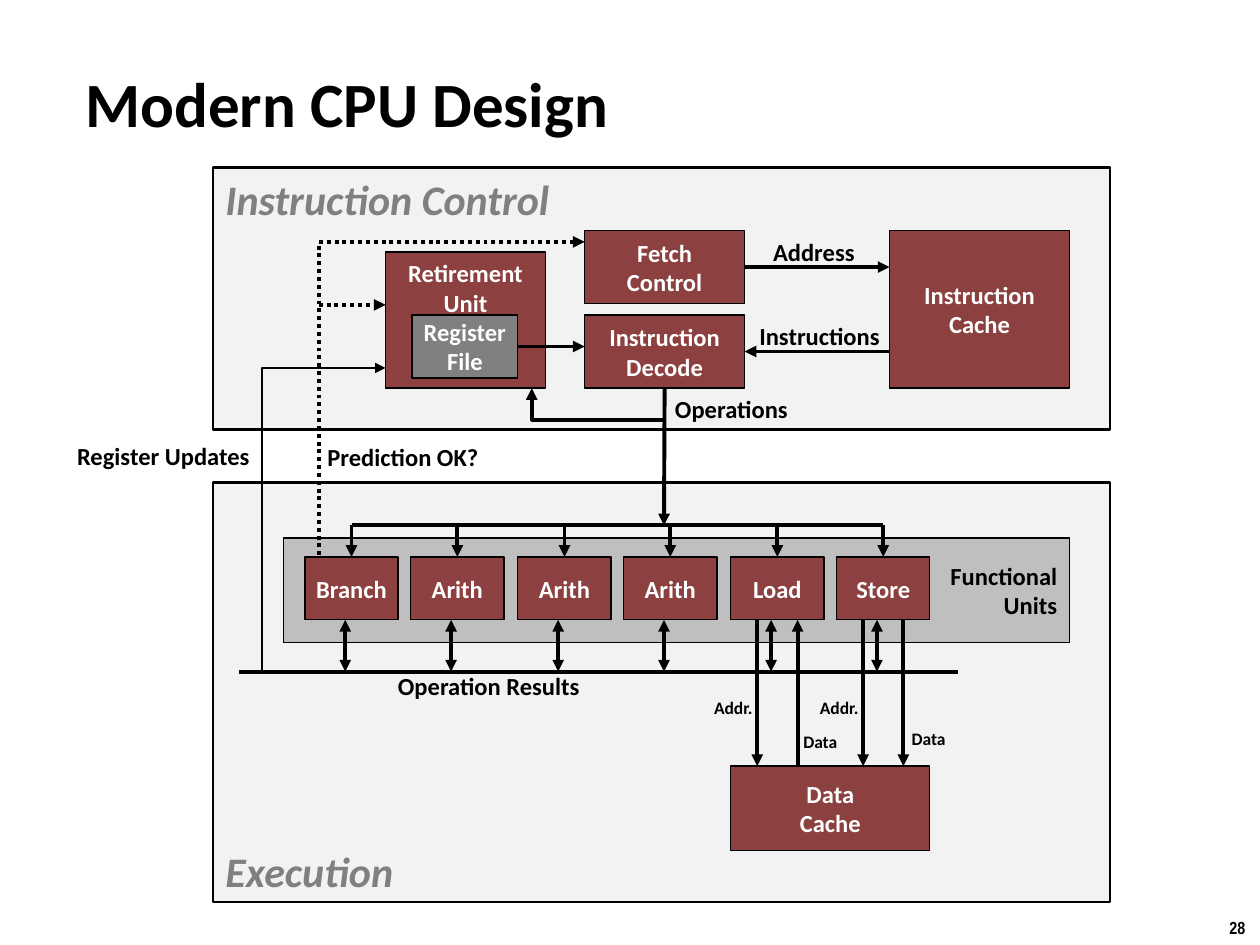
from lxml import etree
from pptx import Presentation
from pptx.dml.color import RGBColor
from pptx.enum.dml import MSO_LINE
from pptx.enum.shapes import MSO_CONNECTOR, MSO_SHAPE
from pptx.enum.text import MSO_ANCHOR, MSO_AUTO_SIZE, PP_ALIGN
from pptx.oxml.ns import qn
from pptx.util import Inches, Pt

THEME = {
    "font": "Calibri", "number_font": "Arial Narrow",
    "black": RGBColor(0, 0, 0), "white": RGBColor(255, 255, 255),
    "panel": RGBColor(0xF2, 0xF2, 0xF2), "band": RGBColor(0xBF, 0xBF, 0xBF),
    "unit": RGBColor(0x8C, 0x40, 0x40), "gray": RGBColor(0x80, 0x80, 0x80),
    "title": 36, "heading": 24, "body": 14, "small": 10,
}
LEFT, CENTER, RIGHT = PP_ALIGN.LEFT, PP_ALIGN.CENTER, PP_ALIGN.RIGHT
TOP, MIDDLE, BOTTOM = MSO_ANCHOR.TOP, MSO_ANCHOR.MIDDLE, MSO_ANCHOR.BOTTOM

prs = Presentation()
prs.slide_width, prs.slide_height = Inches(10), Inches(7.5)
s = prs.slides.add_slide(prs.slide_layouts[6])


def add_box(text, x, y, w, h, fill=None, color="white", size="body", align=CENTER,
            anchor=MIDDLE, border=0.75, italic=False, font="font"):
    at = Inches(x), Inches(y), Inches(w), Inches(h)
    if fill:
        sp = s.shapes.add_shape(MSO_SHAPE.RECTANGLE, *at)
        sp.shadow.inherit = False
        sp.fill.solid()
        sp.fill.fore_color.rgb = THEME[fill]
        sp.line.color.rgb = THEME["black"]
        sp.line.width = Pt(border)
    else:
        sp = s.shapes.add_textbox(*at)
    tf = sp.text_frame
    tf.text = text
    tf.word_wrap = False
    tf.auto_size = MSO_AUTO_SIZE.NONE if fill else MSO_AUTO_SIZE.SHAPE_TO_FIT_TEXT
    tf.vertical_anchor = anchor
    for p in tf.paragraphs:
        p.alignment = align
        for r in p.runs:
            r.font.name = THEME[font]
            r.font.size = Pt(THEME[size])
            r.font.bold = True
            r.font.italic = italic
            r.font.color.rgb = THEME[color]
    return sp


def add_line(points, ends=("tailEnd",), width=2.25, dotted=False):
    points = [(Inches(x), Inches(y)) for x, y in points]
    if len(points) == 2:
        sp = s.shapes.add_connector(MSO_CONNECTOR.STRAIGHT, *points[0], *points[1])
        etree.SubElement(sp._element.spPr, qn("a:effectLst"))
    else:
        builder = s.shapes.build_freeform(*points[0])
        builder.add_line_segments(points[1:], close=False)
        sp = builder.convert_to_shape()
        sp.shadow.inherit = False
        sp.fill.background()
    sp.line.color.rgb = THEME["black"]
    sp.line.width = Pt(width)
    if dotted:
        sp.line.dash_style = MSO_LINE.ROUND_DOT
    for end in ends:
        etree.SubElement(sp.line._get_or_add_ln(), qn(f"a:{end}"), type="triangle")
    return sp


add_box("28", 9.66, 7.23, 0.34, 0.27, color="black", size="small", align=LEFT,
        anchor=TOP, font="number_font")
title = add_box("Modern CPU Design", 0.58, 0.5, 6.41, 0.63, color="black",
                size="title", align=LEFT)
title.text_frame.word_wrap = True
title.text_frame.auto_size = MSO_AUTO_SIZE.NONE

for text, y, h, anchor in [("Execution", 3.83, 3.33, BOTTOM),
                           ("Instruction Control", 1.33, 2.08, TOP)]:
    add_box(text, 1.69, y, 7.12, h, "panel", "gray", "heading", LEFT, anchor, 1.5, True)
add_box("Functional\nUnits", 2.25, 4.27, 6.24, 0.83, "band", "black", align=RIGHT)

add_box("Instruction\nCache", 7.06, 1.83, 1.43, 1.25, "unit")
add_box("Data\nCache", 5.8, 6.08, 1.58, 0.67, "unit")
fetch = add_box("Fetch\nControl", 4.64, 1.83, 1.27, 0.58, "unit")
decode = add_box("Instruction\nDecode", 4.64, 2.5, 1.27, 0.58, "unit")
add_box("Retirement\nUnit", 3.06, 2, 1.27, 1.08, "unit", anchor=TOP)
add_box("Register\nFile", 3.27, 2.5, 0.84, 0.5, "gray")

add_line([(5.91, 2.12), (7.06, 2.12)]).begin_connect(fetch, 3)
add_line([(7.06, 2.79), (5.91, 2.79)]).end_connect(decode, 3)
add_line([(5.27, 3.08), (5.27, 4.17)]).begin_connect(decode, 2)
add_line([(4.11, 2.75), (4.64, 2.75)])
add_line([(5.27, 3.33), (4.22, 3.33), (4.22, 3.08)])
add_line([(4.64, 1.92), (2.53, 1.92), (2.53, 4.42)], ["headEnd"], dotted=True)
add_line([(2.53, 2.42), (3.06, 2.42)], dotted=True)
add_line([(3.06, 2.92), (2.08, 2.92), (2.08, 5.33)], ["headEnd"], 1.5)

add_line([(2.79, 4.17), (7.01, 4.17)], [])
add_line([(1.9, 5.33), (7.6, 5.33)], [])
units = ["Branch", "Arith", "Arith", "Arith", "Load", "Store"]
for i, name in enumerate(units):
    x = round(2.42 + i * 4.22 / 5, 2)
    unit = add_box(name, x, 4.42, 0.74, 0.5, "unit")
    add_line([(x + 0.37, 4.17), (x + 0.37, 4.42)]).end_connect(unit, 0)
    add_line([(x + 0.32, 4.92), (x + 0.32, 5.33)], ["headEnd", "tailEnd"])

for x, end in [(6.01, "tailEnd"), (6.33, "headEnd"), (6.85, "tailEnd"), (7.17, "tailEnd")]:
    add_line([(x, 4.92), (x, 6.08)], [end])

for text, x, y, w, align in [
    ("Address", 6.03, 1.83, 0.86, CENTER),
    ("Instructions", 5.92, 2.5, 1.17, CENTER),
    ("Operations", 5.25, 3.08, 1.11, CENTER),
    ("Prediction OK?", 2.5, 3.46, 1.41, LEFT),
    ("Register Updates", 0.5, 3.45, 1.58, RIGHT),
    ("Operation Results", 3.06, 5.28, 1.66, LEFT),
]:
    add_box(text, x, y, w, 0.34, color="black", align=align, anchor=TOP)
for text, x, y, w in [("Addr.", 5.56, 5.48, 0.52), ("Data", 6.27, 5.75, 0.48),
                      ("Addr.", 6.4, 5.48, 0.52), ("Data", 7.13, 5.73, 0.48)]:
    add_box(text, x, y, w, 0.27, color="black", size="small", anchor=TOP)

prs.save("out.pptx")
